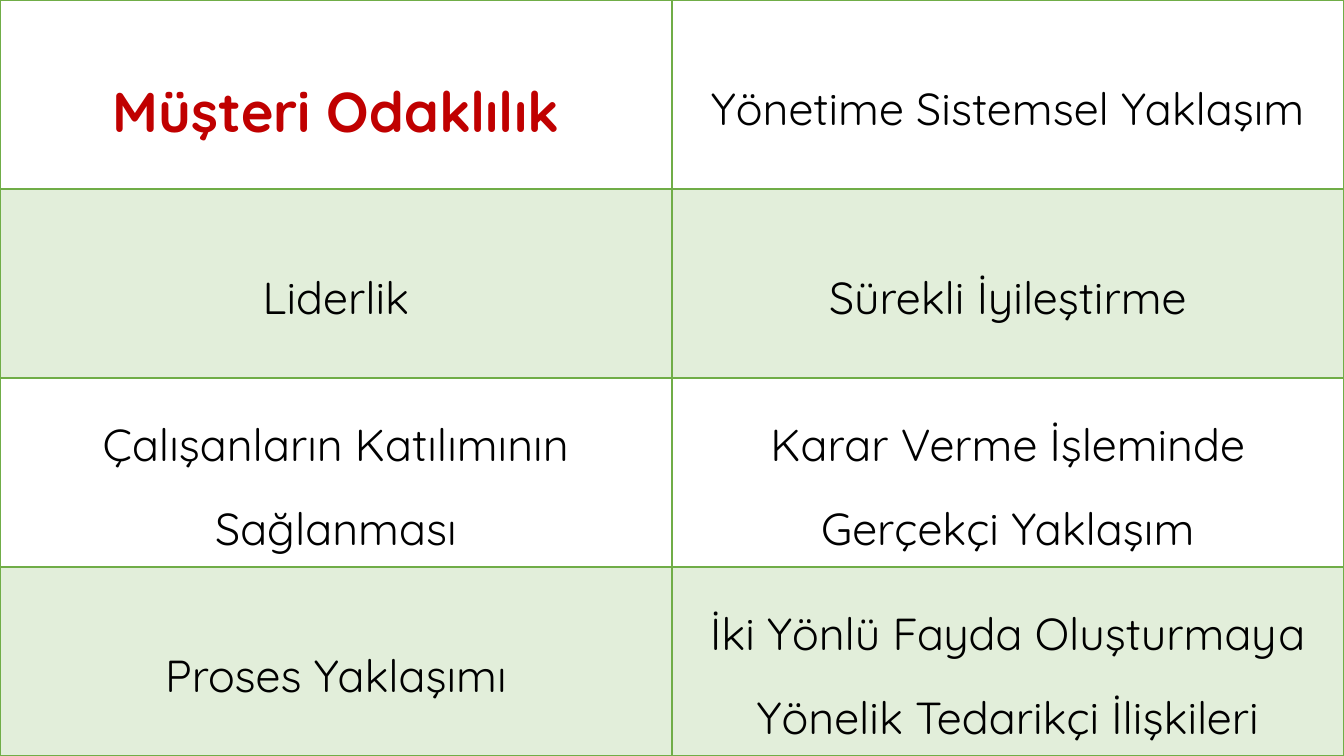
from lxml.etree import SubElement
from pptx import Presentation
from pptx.dml.color import RGBColor
from pptx.enum.text import MSO_ANCHOR, PP_ALIGN
from pptx.oxml.ns import qn
from pptx.util import Pt

PRINCIPLES = [
    ("Müşteri Odaklılık", "Yönetime Sistemsel Yaklaşım"),
    ("Liderlik", "Sürekli İyileştirme"),
    ("Çalışanların Katılımının Sağlanması", "Karar Verme İşleminde Gerçekçi Yaklaşım"),
    ("Proses Yaklaşımı", "İki Yönlü Fayda Oluşturmaya Yönelik Tedarikçi İlişkileri"),
]
HIGHLIGHT = "Müşteri Odaklılık"
GREEN, RED, BLACK = "70AD47", "C00000", "000000"
FONT = "Quicksand"
BAND_OPACITY = 20
WIDTH, HEIGHT = 960, 540


def color(value):
    return RGBColor.from_string(value)


def add_borders(cell, bottom_width):
    properties = cell._tc.get_or_add_tcPr()
    widths = {"lnL": 1, "lnR": 1, "lnT": 1, "lnB": bottom_width}
    for side, width in widths.items():
        border = SubElement(properties, qn(f"a:{side}"), w=str(Pt(width)))
        border_fill = SubElement(border, qn("a:solidFill"))
        SubElement(border_fill, qn("a:srgbClr"), val=GREEN)


def fill_band(cell):
    cell.fill.solid()
    cell.fill.fore_color.rgb = color(GREEN)
    tint = cell._tc.tcPr.find(qn("a:solidFill")).find(qn("a:srgbClr"))
    SubElement(tint, qn("a:alpha"), val=str(BAND_OPACITY * 1000))


def write_principle(cell, principle):
    highlighted = principle == HIGHLIGHT
    cell.text = principle
    cell.vertical_anchor = MSO_ANCHOR.MIDDLE
    paragraph = cell.text_frame.paragraphs[0]
    paragraph.alignment = PP_ALIGN.CENTER
    paragraph.line_spacing = 1.5
    paragraph.font.name = FONT
    paragraph.font.size = Pt(40 if highlighted else 32)
    paragraph.font.bold = highlighted
    paragraph.font.color.rgb = color(RED if highlighted else BLACK)


def main():
    deck = Presentation()
    deck.slide_width, deck.slide_height = Pt(WIDTH), Pt(HEIGHT)
    slide = deck.slides.add_slide(deck.slide_layouts[6])
    principles = slide.shapes.add_table(
        len(PRINCIPLES), len(PRINCIPLES[0]), 0, 0, Pt(WIDTH), Pt(HEIGHT)
    ).table
    principles.first_row = False
    principles.horz_banding = False

    for row, pair in enumerate(PRINCIPLES):
        for column, principle in enumerate(pair):
            cell = principles.cell(row, column)
            write_principle(cell, principle)
            add_borders(cell, 2 if row == 0 else 1)
            if row % 2:
                fill_band(cell)
            else:
                cell.fill.background()

    deck.save("out.pptx")


if __name__ == "__main__":
    main()
